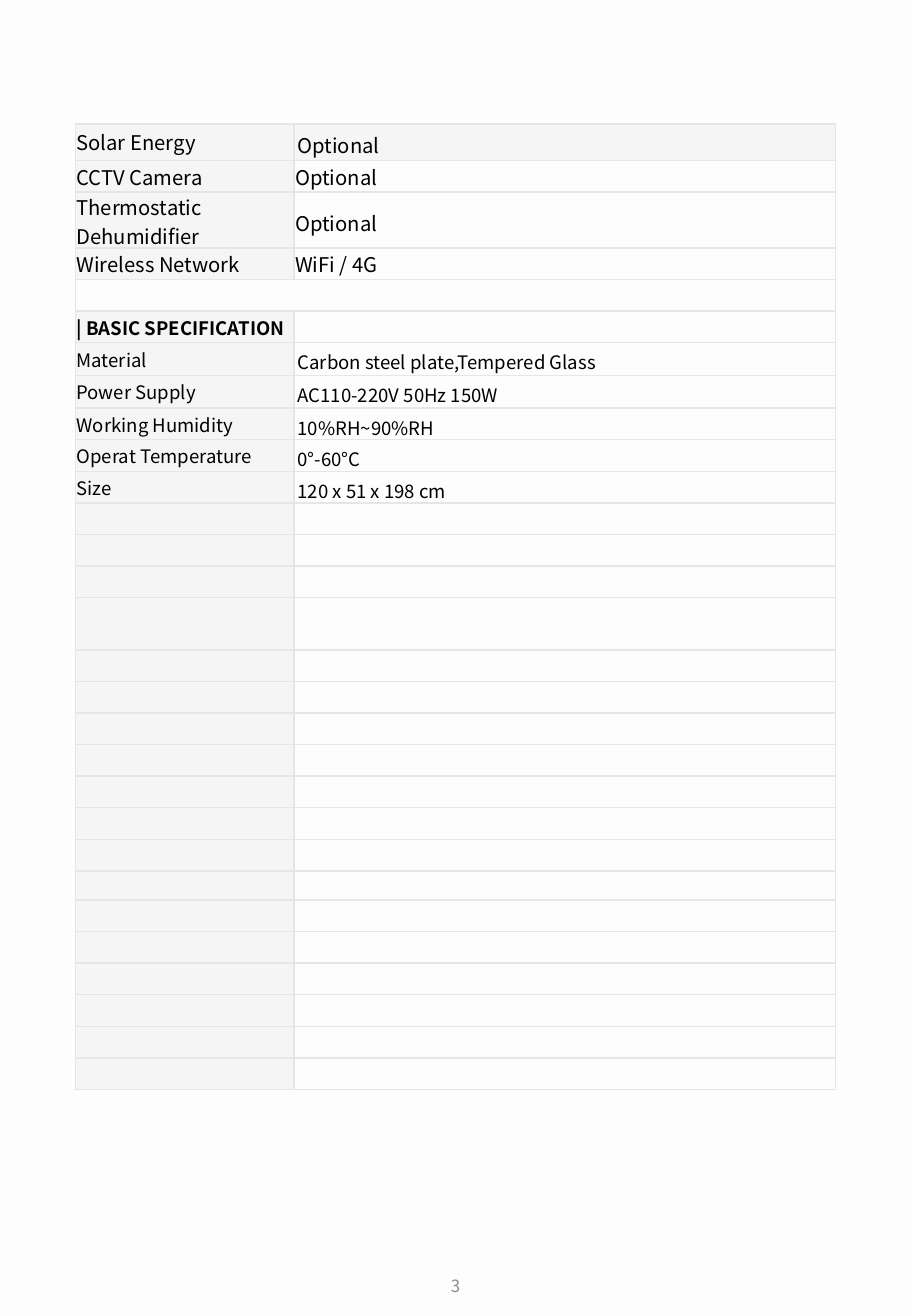
from lxml import etree
from pptx import Presentation
from pptx.dml.color import RGBColor
from pptx.enum.text import MSO_ANCHOR, PP_ALIGN
from pptx.oxml.ns import qn
from pptx.util import Inches, Pt

MIDDLE = MSO_ANCHOR.MIDDLE
LEFT, CENTER = PP_ALIGN.LEFT, PP_ALIGN.CENTER
FONT = "Noto Sans CJK JP"
COLORS = {"paper": "FDFDFD", "label": "E7E6E6", "border": "E6E6E6",
          "ink": "000000", "page": "8C8C8C"}


def write(frame, text, size=11, color="ink", bold=False, align=LEFT, spacing=None):
    paragraph = frame.paragraphs[0]
    paragraph.alignment = align
    if spacing:
        paragraph.line_spacing = spacing
    run = paragraph.add_run()
    run.text = text
    run.font.name = FONT
    run.font.size = Pt(size)
    run.font.bold = bold
    run.font.color.rgb = RGBColor.from_string(COLORS[color])


def style_cell(cell, shaded):
    properties = cell._tc.get_or_add_tcPr()
    for side in ("lnL", "lnR", "lnT", "lnB"):
        line = etree.SubElement(properties, qn(f"a:{side}"), w=str(Pt(1)))
        fill = etree.SubElement(line, qn("a:solidFill"))
        etree.SubElement(fill, qn("a:srgbClr"), val=COLORS["border"])
    cell.fill.solid()
    cell.fill.fore_color.rgb = RGBColor.from_string(COLORS["label" if shaded else "paper"])
    if shaded:
        tint = properties.find(qn("a:solidFill")).find(qn("a:srgbClr"))
        etree.SubElement(tint, qn("a:alpha"), val="34000")


prs = Presentation()
prs.slide_width, prs.slide_height = Inches(7.5), Inches(10.83)
slide = prs.slides.add_slide(prs.slide_layouts[6])
slide.background.fill.solid()
slide.background.fill.fore_color.rgb = RGBColor.from_string(COLORS["paper"])

page_number = slide.shapes.add_textbox(Inches(2.53), Inches(10.33), Inches(2.44), Inches(0.5))
page_number.text_frame.word_wrap = True
page_number.text_frame.vertical_anchor = MIDDLE
write(page_number.text_frame, "3", size=10, color="page", align=CENTER)

options = [
    ("Solar Energy", "Optional"),
    ("CCTV Camera", "Optional"),
    ("Thermostatic Dehumidifier", "Optional"),
    ("Wireless Network", "WiFi / 4G"),
]
basics = [
    ("Material", "Carbon steel plate,Tempered Glass"),
    ("Power Supply", "AC110-220V 50Hz 150W"),
    ("Working Humidity", "10%RH~90%RH"),
    ("Operat Temperature", "0°-60°C"),
    ("Size", "120 x 51 x 198 cm"),
]
ROW_COUNT = 29
GAP_ROW = len(options)
HEADING_ROW = GAP_ROW + 1
SPACED_ROWS = {0, 2, *range(HEADING_ROW + 1, HEADING_ROW + 1 + len(basics))}
INDENTED_ROWS = SPACED_ROWS - {2}
ROW_HEIGHTS = {0: 0.3, 2: 0.46, 6: 0.27, 7: 0.27, 14: 0.43, 22: 0.24}

content = options + [("", ""), ("| BASIC SPECIFICATION", "")] + basics
content += [("", "")] * (ROW_COUNT - len(content))

specification = slide.shapes.add_table(
    ROW_COUNT, 2, Inches(0.62), Inches(1.02), Inches(6.26), Inches(7.92)).table
specification.first_row = False
specification.horz_banding = False
for column, width in zip(specification.columns, (1.8, 4.46)):
    column.width = Inches(width)

for row, entry in enumerate(content):
    specification.rows[row].height = Inches(ROW_HEIGHTS.get(row, 0.26))
    for column, text in enumerate(entry):
        cell = specification.cell(row, column)
        is_label = column == 0
        style_cell(cell, row != GAP_ROW and (is_label or row == 0))
        indented = not is_label and row in INDENTED_ROWS
        cell.margin_left = cell.margin_right = Inches(0.03 if indented else 0.01)
        cell.margin_top = cell.margin_bottom = Inches(0)
        cell.vertical_anchor = MIDDLE
        if text:
            write(cell.text_frame, text, size=12 if row < GAP_ROW else 11,
                  bold=row == HEADING_ROW,
                  spacing=1.2 if not is_label and row in SPACED_ROWS else None)
        else:
            etree.SubElement(cell.text_frame.paragraphs[0]._p, qn("a:endParaRPr"), sz="800")

specification.cell(GAP_ROW, 0).merge(specification.cell(GAP_ROW, 1))

prs.save("out.pptx")
